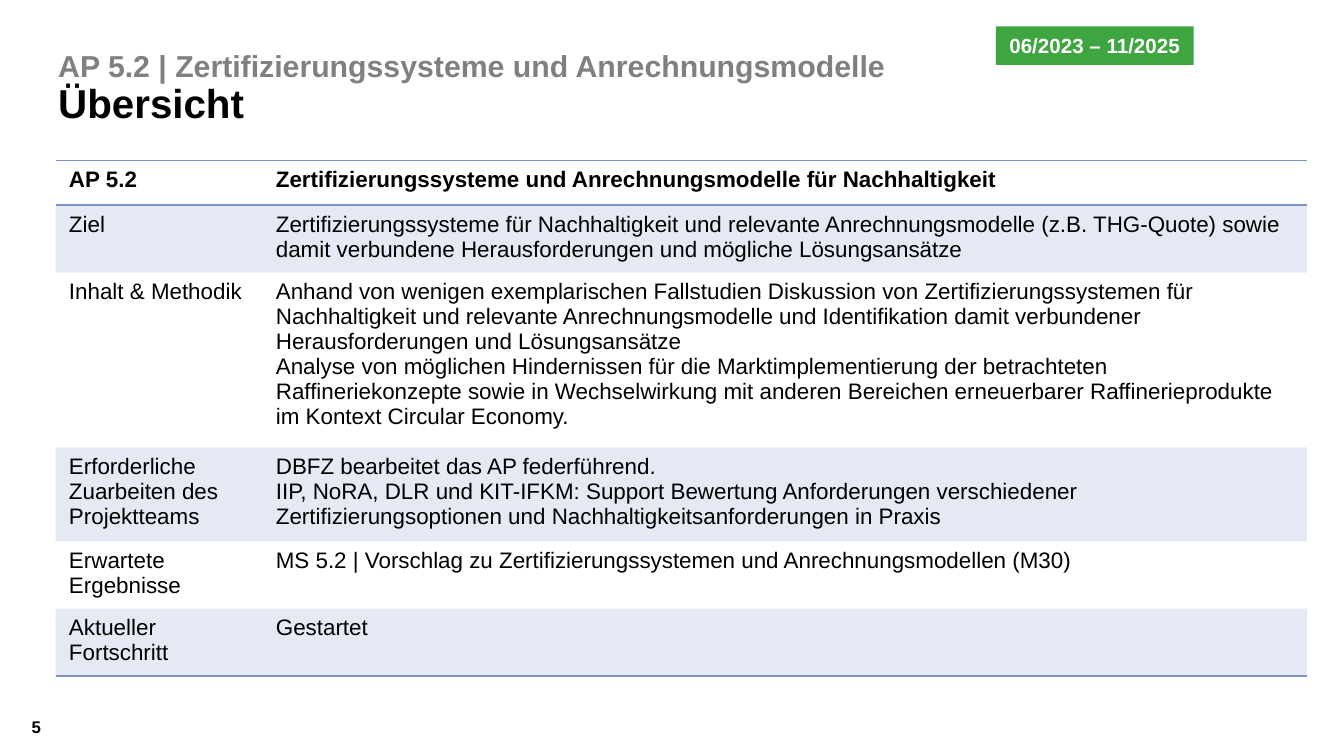
from lxml.etree import SubElement
from pptx import Presentation
from pptx.dml.color import RGBColor
from pptx.enum.shapes import MSO_SHAPE
from pptx.enum.text import MSO_ANCHOR, MSO_AUTO_SIZE, PP_ALIGN
from pptx.oxml import parse_xml
from pptx.oxml.ns import nsdecls, qn
from pptx.util import Cm, Pt

FONT = "Arial"
COLORS = {"text": "000000", "muted": "808080", "band": "7D92C3",
          "badge": "3EA540", "white": "FFFFFF"}
PLAIN_TABLE = "{2D5ABB26-0587-4C30-8999-92F81FD0307C}"

COL_WIDTHS = (3.91, 19.74)
# Row height in cm, label, paragraphs
ROWS = [
    (0.85, "AP 5.2",
     ["Zertifizierungssysteme und Anrechnungsmodelle für Nachhaltigkeit"]),
    (1.2, "Ziel",
     ["Zertifizierungssysteme für Nachhaltigkeit und relevante Anrechnungsmodelle "
      "(z.B. THG-Quote) sowie damit verbundene Herausforderungen und mögliche "
      "Lösungsansätze"]),
    (3.11, "Inhalt & Methodik",
     ["Anhand von wenigen exemplarischen Fallstudien Diskussion von "
      "Zertifizierungssystemen für",
      "Nachhaltigkeit und relevante Anrechnungsmodelle und Identifikation damit "
      "verbundener Herausforderungen und Lösungsansätze",
      "Analyse von möglichen Hindernissen für die Marktimplementierung der "
      "betrachteten Raffineriekonzepte sowie in Wechselwirkung mit anderen "
      "Bereichen erneuerbarer Raffinerieprodukte im Kontext Circular Economy."]),
    (1.66, "Erforderliche Zuarbeiten des Projektteams",
     ["DBFZ bearbeitet das AP federführend.",
      "IIP, NoRA, DLR und KIT-IFKM: Support Bewertung Anforderungen verschiedener "
      "Zertifizierungsoptionen und Nachhaltigkeitsanforderungen in Praxis"]),
    (1.21, "Erwartete Ergebnisse",
     ["MS 5.2 | Vorschlag zu Zertifizierungssystemen und Anrechnungsmodellen (M30)"]),
    (1.2, "Aktueller Fortschritt", ["Gestartet"]),
]


def rgb(name):
    return RGBColor.from_string(COLORS[name])


def add_run(p, text, size, color="text", bold=False):
    r = p.add_run()
    r.text = text
    r.font.name = FONT
    r.font.size = Pt(size)
    r.font.bold = bold
    r.font.color.rgb = rgb(color)


def clear_margins(tf):
    tf.margin_left = tf.margin_right = tf.margin_top = tf.margin_bottom = 0


def add_title(s, left, top, width, height):
    sp = s.shapes.title
    sp.left, sp.top, sp.width, sp.height = left, top, width, height
    tf = sp.text_frame
    clear_margins(tf)
    tf.word_wrap = True
    tf.auto_size = MSO_AUTO_SIZE.NONE
    tf.vertical_anchor = MSO_ANCHOR.BOTTOM
    p = tf.paragraphs[0]
    p.alignment = PP_ALIGN.LEFT
    p.line_spacing = 0.9
    p.space_before = Pt(0)
    add_run(p, "AP 5.2 | Zertifizierungssysteme und Anrechnungsmodelle",
            16.2, "muted", True)
    p.add_line_break()
    add_run(p, "Übersicht", 21.6, bold=True)


def add_badge(s, left, top, width, height):
    sp = s.shapes.add_shape(MSO_SHAPE.RECTANGLE, left, top, width, height)
    sp.shadow.inherit = False
    sp.fill.solid()
    sp.fill.fore_color.rgb = rgb("badge")
    sp.line.fill.background()
    tf = sp.text_frame
    tf.word_wrap = False
    tf.vertical_anchor = MSO_ANCHOR.MIDDLE
    p = tf.paragraphs[0]
    p.alignment = PP_ALIGN.CENTER
    add_run(p, "06/2023 – 11/2025", 11, "white", True)


def add_page_number(s, left, top, width, height):
    tf = s.shapes.add_textbox(left, top, width, height).text_frame
    clear_margins(tf)
    tf.word_wrap = True
    tf.vertical_anchor = MSO_ANCHOR.MIDDLE
    add_run(tf.paragraphs[0], "5", 9, bold=True)


def style_cell(cell, edges, banded):
    """Draw rules on the given edges and a translucent band fill."""
    tc_pr = cell._tc.get_or_add_tcPr()
    for edge in edges:
        tc_pr.append(parse_xml(
            f'<a:{edge} {nsdecls("a")} w="{Pt(1)}"><a:solidFill>'
            f'<a:srgbClr val="{COLORS["band"]}"/></a:solidFill></a:{edge}>'))
    if not banded:
        cell.fill.background()
        return
    cell.fill.solid()
    cell.fill.fore_color.rgb = rgb("band")
    color = tc_pr.find(qn("a:solidFill")).find(qn("a:srgbClr"))
    SubElement(color, qn("a:alpha")).set("val", "20000")


def add_overview(s, left, top, width):
    height = Cm(sum(row[0] for row in ROWS))
    table = s.shapes.add_table(len(ROWS), 2, left, top, width, height).table
    table.first_row = table.horz_banding = False
    table._tbl.tblPr.find(qn("a:tableStyleId")).text = PLAIN_TABLE
    for column, col_width in zip(table.columns, COL_WIDTHS):
        column.width = Cm(col_width)
    edges = {0: ("lnT", "lnB"), len(ROWS) - 1: ("lnB",)}
    for i, (row_height, label, paragraphs) in enumerate(ROWS):
        table.rows[i].height = Cm(row_height)
        for j, texts in enumerate(([label], paragraphs)):
            cell = table.cell(i, j)
            style_cell(cell, edges.get(i, ()), banded=i % 2 == 1)
            tf = cell.text_frame
            for k, text in enumerate(texts):
                p = tf.add_paragraph() if k else tf.paragraphs[0]
                add_run(p, text, 12, bold=i == 0)


def main():
    prs = Presentation()
    prs.slide_width, prs.slide_height = Cm(25.4), Cm(14.29)
    s = prs.slides.add_slide(prs.slide_layouts[5])
    add_page_number(s, Cm(0.6), Cm(13.18), Cm(0.92), Cm(1.1))
    add_title(s, Cm(1.1), Cm(0.81), Cm(19.08), Cm(1.6))
    add_overview(s, Cm(1.05), Cm(3.03), Cm(sum(COL_WIDTHS)))
    add_badge(s, Cm(18.82), Cm(0.5), Cm(3.74), Cm(0.73))
    prs.save("out.pptx")


if __name__ == "__main__":
    main()
